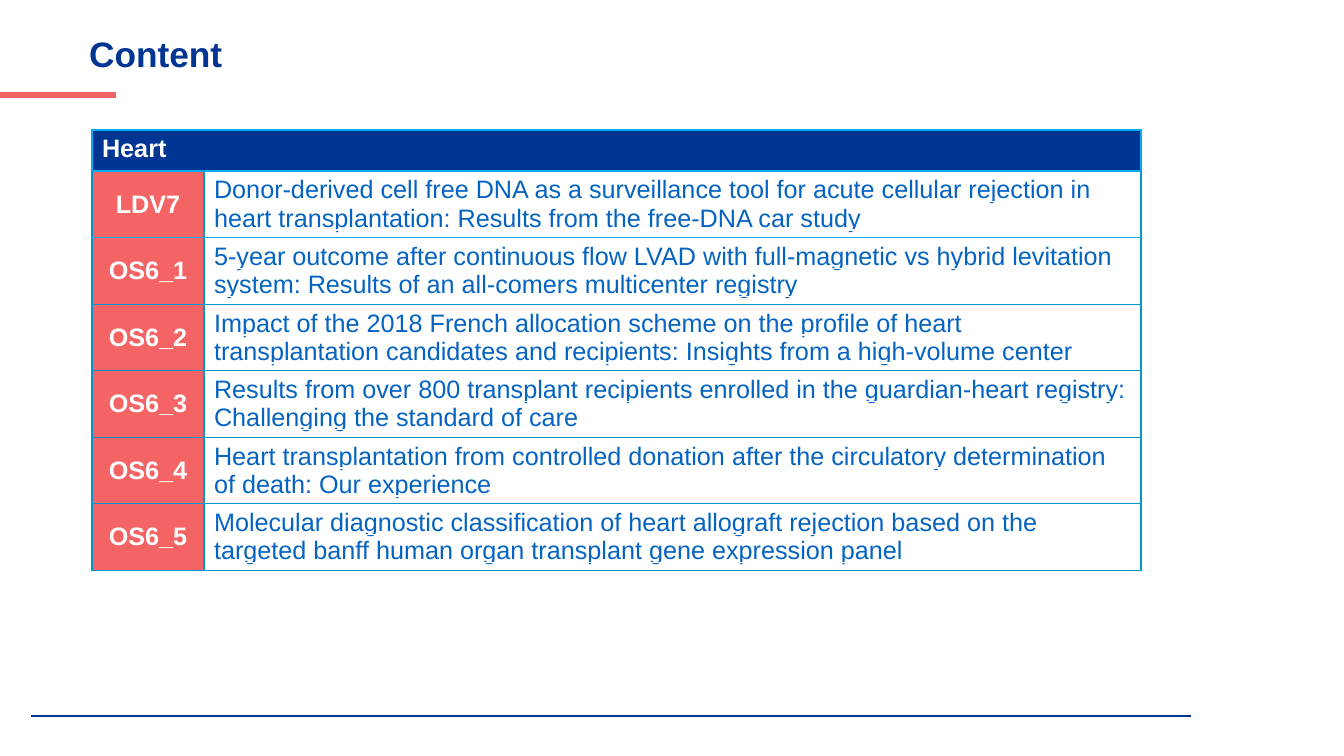
from dataclasses import dataclass

from lxml.etree import SubElement
from pptx import Presentation
from pptx.dml.color import RGBColor
from pptx.enum.shapes import MSO_CONNECTOR as Connector
from pptx.enum.text import MSO_ANCHOR as Anchor, PP_ALIGN as Align
from pptx.oxml import parse_xml
from pptx.oxml.ns import nsdecls, qn
from pptx.util import Emu, Pt

SLIDE_WIDTH, SLIDE_HEIGHT = 1344, 756
EMU_PER_PX = 12192000 / SLIDE_WIDTH


@dataclass(frozen=True)
class Theme:
    """Colours, type sizes and line widths of the slide."""
    font: str = "Arial"
    navy: str = "003594"
    coral: str = "F46465"
    white: str = "FFFFFF"
    link: str = "0563C1"
    border: str = "0097CE"
    bright_border: str = "00B0F0"
    title_size: float = 25.2
    table_size: float = 18
    border_width: float = 1


THEME = Theme()

SECTION = "Heart"
TALKS = [
    ("LDV7", "Donor-derived cell free DNA as a surveillance tool for acute cellular "
             "rejection in heart transplantation: Results from the free-DNA car study"),
    ("OS6_1", "5-year outcome after continuous flow LVAD with full-magnetic vs hybrid "
              "levitation system: Results of an all-comers multicenter registry"),
    ("OS6_2", "Impact of the 2018 French allocation scheme on the profile of heart "
              "transplantation candidates and recipients: Insights from a high-volume center"),
    ("OS6_3", "Results from over 800 transplant recipients enrolled in the guardian-heart "
              "registry: Challenging the standard of care"),
    ("OS6_4", "Heart transplantation from controlled donation after the circulatory "
              "determination of death: Our experience"),
    ("OS6_5", "Molecular diagnostic classification of heart allograft rejection based on "
              "the targeted banff human organ transplant gene expression panel"),
]


def px(length):
    """Turn pixels into EMU."""
    return Emu(round(length * EMU_PER_PX))


def write(frame, text, *, size, color, bold=False, align=Align.LEFT,
          spacing=None, underline=None):
    """Put one formatted paragraph in a text frame; underline is its line colour."""
    paragraph = frame.paragraphs[0]
    paragraph.alignment = align
    if spacing:
        paragraph.line_spacing = spacing
    run = paragraph.add_run()
    run.text = text
    font = run.font
    font.name, font.size, font.bold = THEME.font, Pt(size), bold
    font.color.rgb = RGBColor.from_string(color)
    if underline:
        font.underline = True
        run._r.rPr.find(qn("a:solidFill")).addnext(parse_xml(
            f'<a:uFill {nsdecls("a")}><a:solidFill>'
            f'<a:srgbClr val="{underline}"/></a:solidFill></a:uFill>'))


def add_rule(slide, left, right, y, color, width):
    """Draw a horizontal rule."""
    rule = slide.shapes.add_connector(Connector.STRAIGHT, px(left), px(y), px(right), px(y))
    rule.line.color.rgb = RGBColor.from_string(color)
    rule.line.width = Pt(width)
    SubElement(rule._element.spPr, qn("a:effectLst"))


def style_cell(cell, fill, sides, top, bottom):
    """Fill a cell and colour its four borders."""
    cell.fill.solid()
    cell.fill.fore_color.rgb = RGBColor.from_string(fill)
    colors = {"lnL": sides, "lnR": sides, "lnT": top, "lnB": bottom}
    for position, (edge, color) in enumerate(colors.items()):
        cell._tc.tcPr.insert(position, parse_xml(
            f'<a:{edge} {nsdecls("a")} w="{Pt(THEME.border_width)}"><a:solidFill>'
            f'<a:srgbClr val="{color}"/></a:solidFill></a:{edge}>'))


def add_title(slide, text, left, top, width, height):
    """Place the title in its placeholder."""
    title = slide.shapes.title
    title.left, title.top, title.width, title.height = map(px, (left, top, width, height))
    title.text_frame.vertical_anchor = Anchor.MIDDLE
    write(title.text_frame, text, size=THEME.title_size, color=THEME.navy,
          bold=True, spacing=0.9)


def add_programme(slide, left, top, width, code_width=112, header_height=41, talk_height=66):
    """Build the table of talks under one section header."""
    height = header_height + talk_height * len(TALKS)
    programme = slide.shapes.add_table(
        len(TALKS) + 1, 2, px(left), px(top), px(width), px(height)).table
    programme.first_row = programme.horz_banding = False
    programme.columns[0].width = px(code_width)
    programme.columns[1].width = px(width - code_width)

    programme.rows[0].height = px(header_height)
    header = programme.cell(0, 0)
    header.merge(programme.cell(0, 1))
    for cell in programme.rows[0].cells:
        style_cell(cell, THEME.navy, *[THEME.bright_border] * 3)
    write(header.text_frame, SECTION, size=THEME.table_size, color=THEME.white, bold=True)

    edges = [THEME.bright_border] * 3 + [THEME.border] * (len(TALKS) - 1)
    for row, (code, topic) in enumerate(TALKS, start=1):
        programme.rows[row].height = px(talk_height)
        code_cell, topic_cell = programme.rows[row].cells
        for cell, fill in ((code_cell, THEME.coral), (topic_cell, THEME.white)):
            style_cell(cell, fill, THEME.border, edges[row], edges[row + 1])
        code_cell.vertical_anchor = Anchor.MIDDLE
        write(code_cell.text_frame, code, size=THEME.table_size, color=THEME.white,
              bold=True, align=Align.CENTER)
        write(topic_cell.text_frame, topic, size=THEME.table_size, color=THEME.link,
              underline=THEME.white)


def main():
    """Build and save the content slide."""
    deck = Presentation()
    deck.slide_width, deck.slide_height = px(SLIDE_WIDTH), px(SLIDE_HEIGHT)
    slide = deck.slides.add_slide(deck.slide_layouts[5])
    add_rule(slide, 0, 116, 95, THEME.coral, 4.5)
    add_rule(slide, 31, 1191, 716, THEME.navy, 1.5)
    add_title(slide, "Content", 79, 34, 1159, 44)
    add_programme(slide, 92, 130, 1049)
    deck.save("out.pptx")


if __name__ == "__main__":
    main()
